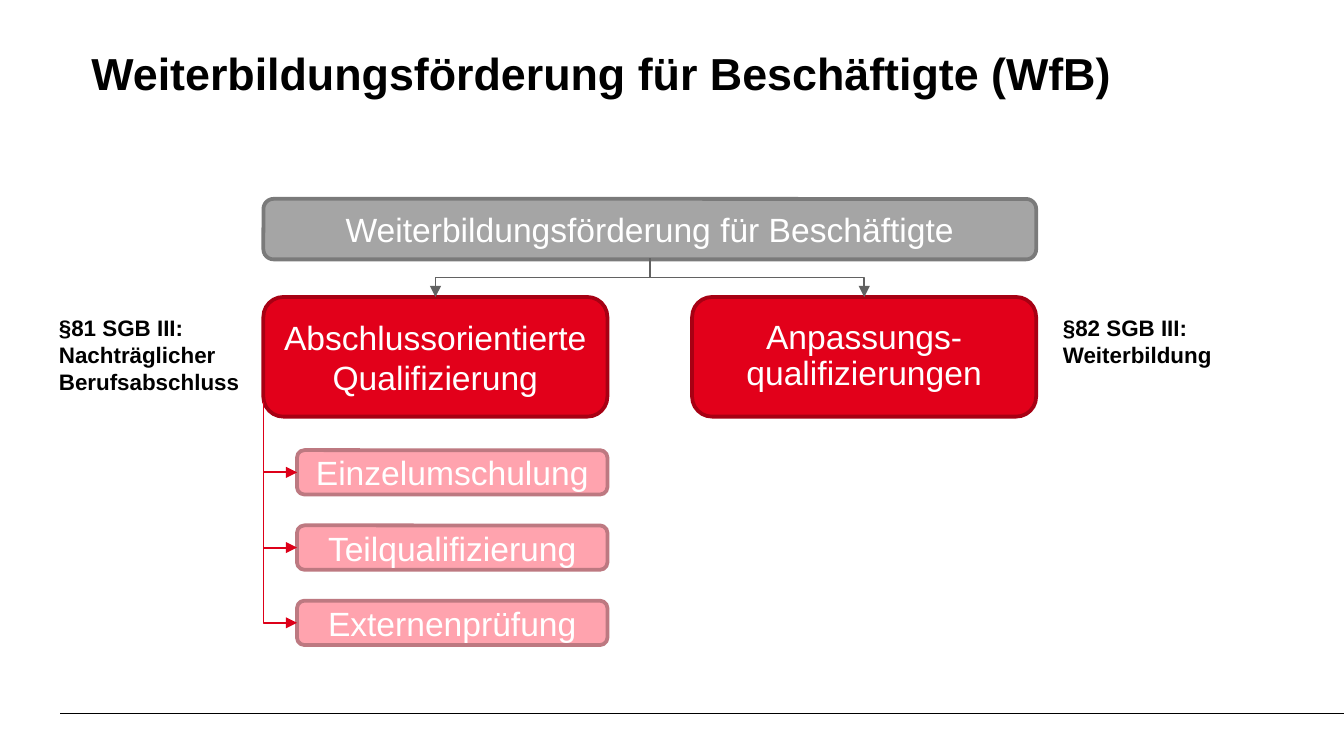
from pptx import Presentation
from pptx.dml.color import RGBColor
from pptx.enum.shapes import MSO_CONNECTOR, MSO_SHAPE
from pptx.enum.text import MSO_ANCHOR, MSO_AUTO_SIZE, PP_ALIGN
from pptx.oxml.ns import qn
from pptx.util import Inches, Pt

FONT = "Arial"
COLORS = {
    "black": "000000",
    "white": "FFFFFF",
    "gray": "A5A5A5",
    "gray_border": "7A7A7A",
    "gray_arrow": "626262",
    "red": "E2001A",
    "red_border": "A70013",
    "red_arrow": "DD0019",
    "pink": "FFA3AE",
    "pink_border": "BD7981",
}


def rgb(name):
    return RGBColor.from_string(COLORS[name])


def format_runs(text_frame, size, color, bold=False):
    for paragraph in text_frame.paragraphs:
        for run in paragraph.runs:
            run.font.name = FONT
            run.font.size = Pt(size)
            run.font.bold = bold
            run.font.color.rgb = rgb(color)


def add_title(slide, text):
    title = slide.shapes.title
    title.left, title.top = Inches(0.68), Inches(0.34)
    title.width, title.height = Inches(8.45), Inches(0.35)
    text_frame = title.text_frame
    text_frame.text = text
    text_frame.auto_size = MSO_AUTO_SIZE.NONE
    text_frame.vertical_anchor = MSO_ANCHOR.TOP
    text_frame.margin_left = text_frame.margin_right = 0
    text_frame.margin_top = text_frame.margin_bottom = 0
    text_frame.paragraphs[0].alignment = PP_ALIGN.LEFT
    format_runs(text_frame, 24, "black", bold=True)


def add_box(slide, text, left, top, width, height, color, line_spacing=None):
    shape = slide.shapes.add_shape(
        MSO_SHAPE.ROUNDED_RECTANGLE,
        Inches(left), Inches(top), Inches(width), Inches(height))
    shape.shadow.inherit = False
    shape.fill.solid()
    shape.fill.fore_color.rgb = rgb(color)
    shape.line.color.rgb = rgb(color + "_border")
    shape.line.width = Pt(2)
    text_frame = shape.text_frame
    text_frame.text = text
    text_frame.word_wrap = True
    text_frame.vertical_anchor = MSO_ANCHOR.MIDDLE
    paragraph = text_frame.paragraphs[0]
    paragraph.alignment = PP_ALIGN.CENTER
    paragraph.line_spacing = line_spacing
    format_runs(text_frame, 18, "white")


def add_note(slide, text, left, top, width, height):
    note = slide.shapes.add_textbox(
        Inches(left), Inches(top), Inches(width), Inches(height))
    text_frame = note.text_frame
    text_frame.text = text
    text_frame.word_wrap = False
    text_frame.auto_size = MSO_AUTO_SIZE.SHAPE_TO_FIT_TEXT
    format_runs(text_frame, 12, "black", bold=True)


def add_line(slide, kind, start, end, color, width):
    connector = slide.shapes.add_connector(
        kind, *(Inches(value) for value in (*start, *end)))
    connector.line.color.rgb = rgb(color)
    connector.line.width = Pt(width)
    properties = connector._element.spPr
    properties.append(properties.makeelement(qn("a:effectLst"), {}))
    return connector


def add_elbow_arrow(slide, start, end, color, preset):
    """Draw an arrow that leaves its start downwards, by turning a sideways elbow."""
    (start_x, start_y), (end_x, end_y) = start, end
    center_x, center_y = (start_x + end_x) / 2, (start_y + end_y) / 2
    half_width, half_height = (end_y - start_y) / 2, abs(end_x - start_x) / 2
    to_right = end_x > start_x
    if to_right:
        half_width = -half_width  # begin on the right, which mirrors the elbow
    connector = add_line(
        slide, MSO_CONNECTOR.ELBOW,
        (center_x - half_width, center_y - half_height),
        (center_x + half_width, center_y + half_height), color, 1)
    properties = connector._element.spPr
    degrees = 270 if to_right else 90
    properties.find(qn("a:xfrm")).set("rot", str(degrees * 60000))
    properties.find(qn("a:prstGeom")).set("prst", preset)
    line = properties.find(qn("a:ln"))
    line.append(line.makeelement(qn("a:tailEnd"), {"type": "triangle"}))


def main():
    # Widescreen page, 16:9
    presentation = Presentation()
    presentation.slide_width = Inches(10)
    presentation.slide_height = Inches(10 * 9 / 16)
    slide = presentation.slides.add_slide(presentation.slide_layouts[5])

    # Footer rule and title
    add_line(slide, MSO_CONNECTOR.STRAIGHT, (0.45, 5.31), (10, 5.31), "black", 0.5)
    add_title(slide, "Weiterbildungsförderung für Beschäftigte (WfB)")

    # Top box and its two branches
    left, total_width = 1.96, 5.75
    branch_top, branch_width, branch_height = 2.21, 2.56, 0.89
    right_branch = left + total_width - branch_width
    add_box(slide, "Weiterbildungsförderung für Beschäftigte",
            left, 1.48, total_width, 0.45, "gray")
    add_box(slide, "Abschlussorientierte Qualifizierung",
            left, branch_top, branch_width, branch_height, "red")
    add_box(slide, "Anpassungs- qualifizierungen",
            right_branch, branch_top, branch_width, branch_height, "red", 0.9)

    # Options below the left branch, chained by arrows
    option_left, option_width, option_height = 2.21, 2.31, 0.33
    arrow_start = 2.99
    for index, text in enumerate(
            ("Einzelumschulung", "Teilqualifizierung", "Externenprüfung")):
        top = 3.35 + 0.56 * index
        middle = top + option_height / 2
        add_box(slide, text, option_left, top, option_width, option_height, "pink")
        add_elbow_arrow(slide, (left, arrow_start), (option_left, middle),
                        "red_arrow", "bentConnector2")
        arrow_start = middle

    # Arrows from the top box to the branches
    for branch_left in (left, right_branch):
        add_elbow_arrow(slide, (left + total_width / 2, 1.92),
                        (branch_left + branch_width / 2, branch_top),
                        "gray_arrow", "bentConnector3")

    # Legal references beside the branches
    add_note(slide, "§81 SGB III:\nNachträglicher\vBerufsabschluss",
             0.34, 2.29, 1.56, 0.71)
    add_note(slide, "§82 SGB III:\vWeiterbildung", 7.81, 2.29, 1.32, 0.5)

    presentation.save("out.pptx")


if __name__ == "__main__":
    main()
